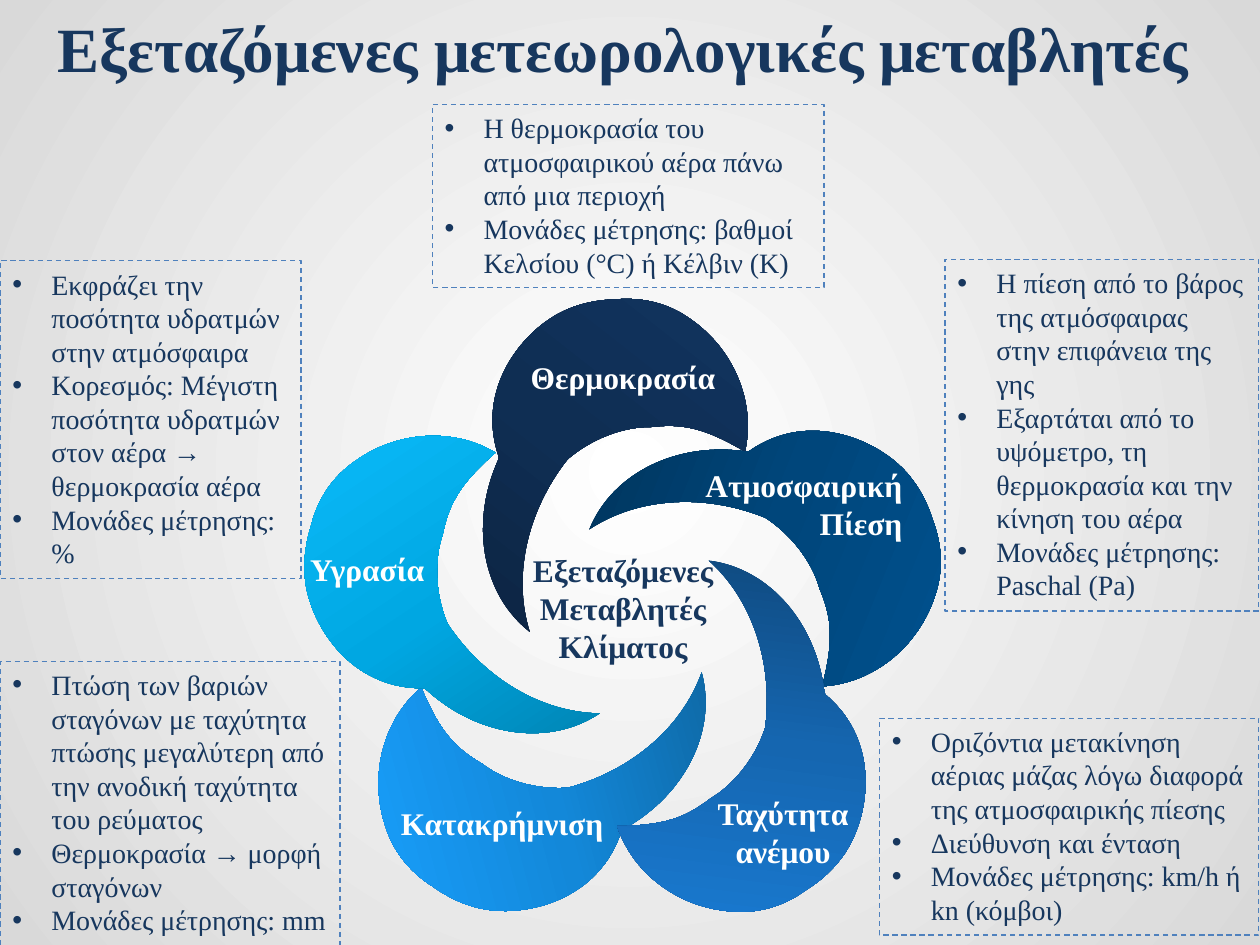
from dataclasses import dataclass
from pptx import Presentation
from pptx.dml.color import RGBColor
from pptx.enum.dml import MSO_LINE
from pptx.enum.shapes import MSO_SHAPE
from pptx.enum.text import MSO_ANCHOR, MSO_AUTO_SIZE, PP_ALIGN
from pptx.oxml import parse_xml
from pptx.oxml.ns import nsdecls, qn
from pptx.oxml.xmlchemy import OxmlElement
from pptx.util import Inches, Pt

FONT = "Times New Roman"
NAVY = RGBColor(0x17, 0x37, 0x5E)
WHITE = RGBColor(0xFF, 0xFF, 0xFF)
GREY = RGBColor(0xD9, 0xD9, 0xD9)
BORDER = RGBColor(0x4F, 0x81, 0xBD)
INDIGO = (RGBColor(0x0B, 0x20, 0x3B), RGBColor(0x0F, 0x2E, 0x53), RGBColor(0x12, 0x36, 0x63))
OCEAN = (RGBColor(0x00, 0x31, 0x56), RGBColor(0x00, 0x46, 0x7B), RGBColor(0x00, 0x53, 0x92))
AZURE = (RGBColor(0x0D, 0x60, 0x98), RGBColor(0x13, 0x88, 0xD9), RGBColor(0x19, 0xA1, 0xFF))
COBALT = (RGBColor(0x0F, 0x48, 0x7C), RGBColor(0x15, 0x66, 0xB0), RGBColor(0x19, 0x7A, 0xD1))
CYAN = (RGBColor(0x00, 0x75, 0x9F), RGBColor(0x00, 0xA7, 0xE2), RGBColor(0x0D, 0xC0, 0xFF))

SLIDE_WIDTH, SLIDE_HEIGHT = Inches(10), Inches(7.5)
COLUMNS, ROWS = 100, 75
PETAL_COLUMNS, PETAL_ROWS = 19.2, 27.5
PETAL_UNITS = (192, 275)

PETAL_START = (37, 25)
PETAL_CURVES = (
    ((52, 11), (71, 2), (92, 1)),
    ((135, -2), (175, 21), (192, 57)),
    ((155, 62), (139, 70), (121, 88)),
    ((105, 100), (90, 123), (85, 149)),
    ((85, 201), (108, 249), (146, 275)),
    ((97, 275), (55, 236), (42, 183)),
    ((42, 182), (42, 182), (41, 181)),
    ((-4, 152), (-5, 100), (5, 70)),
    ((10, 54), (21, 38), (37, 25)),
)


@dataclass(frozen=True)
class Area:
    column: float
    row: float
    columns: float
    rows: float

    def lengths(self) -> tuple:
        across, down = SLIDE_WIDTH / COLUMNS, SLIDE_HEIGHT / ROWS
        return (round(self.column * across), round(self.row * down),
                round(self.columns * across), round(self.rows * down))


@dataclass(frozen=True)
class Petal:
    column: float
    row: float
    rotation: float
    colors: tuple


@dataclass(frozen=True)
class Label:
    area: Area
    text: str
    color: RGBColor = WHITE
    alignment: PP_ALIGN = PP_ALIGN.CENTER
    anchor: MSO_ANCHOR = MSO_ANCHOR.TOP


@dataclass(frozen=True)
class Note:
    area: Area
    items: tuple


PETALS = (
    Petal(37, 22.5, 38.1, INDIGO),
    Petal(51.8, 28.8, 112.1, OCEAN),
    Petal(34.1, 48, 255, AZURE),
    Petal(49.9, 45, 187.1, COBALT),
    Petal(26.2, 34.2, 326.3, CYAN),
)
PETAL_LABELS = (
    Label(Area(54.7, 36.5, 17.9, 7.1), "Ατμοσφαιρική Πίεση", alignment=PP_ALIGN.RIGHT),
    Label(Area(40.9, 27.9, 17.1, 4), "Θερμοκρασία"),
    Label(Area(20.8, 43.2, 16.7, 4), "Υγρασία"),
    Label(Area(53.8, 62.5, 16.7, 7.1), "Ταχύτητα ανέμου"),
    Label(Area(30.3, 63.3, 19.1, 4), "Κατακρήμνιση"),
)
CENTRE_LABEL = Label(Area(40, 43.2, 18.9, 10.1), "Εξεταζόμενες Μεταβλητές Κλίματος",
                     NAVY, anchor=MSO_ANCHOR.MIDDLE)
NOTES = (
    Note(Area(34.3, 8.3, 31.1, 14.5), (
        "Η θερμοκρασία του ατμοσφαιρικού αέρα πάνω από μια περιοχή",
        "Μονάδες μέτρησης: βαθμοί Κελσίου (°C) ή Κέλβιν (Κ)")),
    Note(Area(75, 20.6, 24.9, 27.9), (
        "Η πίεση από το βάρος της ατμόσφαιρας στην επιφάνεια της γης",
        "Εξαρτάται από το υψόμετρο, τη θερμοκρασία και την κίνηση του αέρα",
        "Μονάδες μέτρησης: Paschal (Pa)")),
    Note(Area(69.8, 57, 30.1, 17.2), (
        "Οριζόντια μετακίνηση αέριας μάζας λόγω διαφορά της ατμοσφαιρικής πίεσης",
        "Διεύθυνση και ένταση",
        "Μονάδες μέτρησης: km/h ή kn (κόμβοι)")),
    Note(Area(0, 52.5, 27, 22.6), (
        "Πτώση των βαριών σταγόνων με ταχύτητα πτώσης μεγαλύτερη από την ανοδική ταχύτητα του ρεύματος",
        "Θερμοκρασία → μορφή σταγόνων",
        "Μονάδες μέτρησης: mm")),
    Note(Area(0, 20.7, 23.9, 25.2), (
        "Εκφράζει την ποσότητα υδρατμών στην ατμόσφαιρα",
        "Κορεσμός: Μέγιστη ποσότητα υδρατμών στον αέρα → θερμοκρασία αέρα",
        "Μονάδες μέτρησης: %")),
)


def place(shape, area: Area) -> None:
    shape.left, shape.top, shape.width, shape.height = area.lengths()


def replace_descendant(element, tag: str, xml: str) -> None:
    current = element.find(".//" + qn(tag))
    current.getparent().replace(current, parse_xml(xml))


def set_gradient(element, colors: tuple, direction: str) -> None:
    gap = 100000 // (len(colors) - 1)
    stops = "".join(f'<a:gs pos="{index * gap}"><a:srgbClr val="{color}"/></a:gs>'
                    for index, color in enumerate(colors))
    replace_descendant(element, "a:gradFill",
                       f'<a:gradFill {nsdecls("a")} rotWithShape="1">'
                       f"<a:gsLst>{stops}</a:gsLst>{direction}</a:gradFill>")


def set_curves(element) -> None:
    def point(position: tuple) -> str:
        return f'<a:pt x="{position[0]}" y="{position[1]}"/>'

    width, height = PETAL_UNITS
    curves = "".join(f'<a:cubicBezTo>{"".join(map(point, curve))}</a:cubicBezTo>'
                     for curve in PETAL_CURVES)
    replace_descendant(element, "a:path",
                       f'<a:path {nsdecls("a")} w="{width}" h="{height}">'
                       f"<a:moveTo>{point(PETAL_START)}</a:moveTo>{curves}<a:close/></a:path>")


def add_run(paragraph, text: str, size: float, color: RGBColor, bold: bool = False) -> None:
    run = paragraph.add_run()
    run.text = text
    run.font.name = FONT
    run.font.size = Pt(size)
    run.font.bold = bold
    run.font.color.rgb = color


def add_petal(shapes, petal: Petal) -> None:
    builder = shapes.build_freeform(*PETAL_START, scale=Inches(0.01))
    builder.add_line_segments([curve[-1] for curve in PETAL_CURVES], close=True)
    shape = builder.convert_to_shape()
    set_curves(shape._element)
    place(shape, Area(petal.column, petal.row, PETAL_COLUMNS, PETAL_ROWS))
    shape.rotation = petal.rotation
    shape.shadow.inherit = False
    shape.line.fill.background()
    shape.fill.gradient()
    set_gradient(shape._element, petal.colors, '<a:lin ang="16200000" scaled="0"/>')


def add_label(shapes, label: Label) -> None:
    frame = shapes.add_textbox(*label.area.lengths()).text_frame
    frame.word_wrap = True
    frame.auto_size = MSO_AUTO_SIZE.SHAPE_TO_FIT_TEXT
    frame.vertical_anchor = label.anchor
    paragraph = frame.paragraphs[0]
    paragraph.alignment = label.alignment
    add_run(paragraph, label.text, 18, label.color, bold=True)


def add_bullet(paragraph) -> None:
    properties = paragraph._p.get_or_add_pPr()
    properties.set("marL", str(Inches(0.31)))
    properties.set("indent", str(-Inches(0.31)))
    font = OxmlElement("a:buFont")
    font.set("typeface", "Arial")
    bullet = OxmlElement("a:buChar")
    bullet.set("char", "•")
    properties.extend((font, bullet))


def add_note(shapes, note: Note) -> None:
    shape = shapes.add_shape(MSO_SHAPE.RECTANGLE, *note.area.lengths())
    shape.shadow.inherit = False
    shape.fill.background()
    shape.line.color.rgb = BORDER
    shape.line.width = Pt(0.75)
    shape.line.dash_style = MSO_LINE.DASH
    frame = shape.text_frame
    frame.word_wrap = True
    frame.auto_size = MSO_AUTO_SIZE.SHAPE_TO_FIT_TEXT
    frame.vertical_anchor = MSO_ANCHOR.TOP
    for index, item in enumerate(note.items):
        paragraph = frame.add_paragraph() if index else frame.paragraphs[0]
        paragraph.alignment = PP_ALIGN.LEFT
        add_bullet(paragraph)
        add_run(paragraph, item, 16, NAVY)


def main() -> None:
    presentation = Presentation()
    presentation.slide_width, presentation.slide_height = SLIDE_WIDTH, SLIDE_HEIGHT
    slide = presentation.slides.add_slide(presentation.slide_layouts[5])
    slide.background.fill.gradient()
    set_gradient(slide._element, (WHITE, GREY), '<a:path path="circle"><a:fillToRect '
                 'l="50000" t="50000" r="50000" b="50000"/></a:path>')
    title = slide.shapes.title
    place(title, Area(3.1, 0, 92.8, 7.5))
    title.text_frame.auto_size = MSO_AUTO_SIZE.NONE
    title.text_frame.vertical_anchor = MSO_ANCHOR.MIDDLE
    paragraph = title.text_frame.paragraphs[0]
    paragraph.alignment = PP_ALIGN.CENTER
    add_run(paragraph, "Εξεταζόμενες μετεωρολογικές μεταβλητές", 36, NAVY, bold=True)
    flower = slide.shapes.add_group_shape()
    for petal in PETALS:
        add_petal(flower.shapes, petal)
    for label in PETAL_LABELS:
        add_label(flower.shapes, label)
    add_label(slide.shapes, CENTRE_LABEL)
    for note in NOTES:
        add_note(slide.shapes, note)
    presentation.save("out.pptx")


if __name__ == "__main__":
    main()
